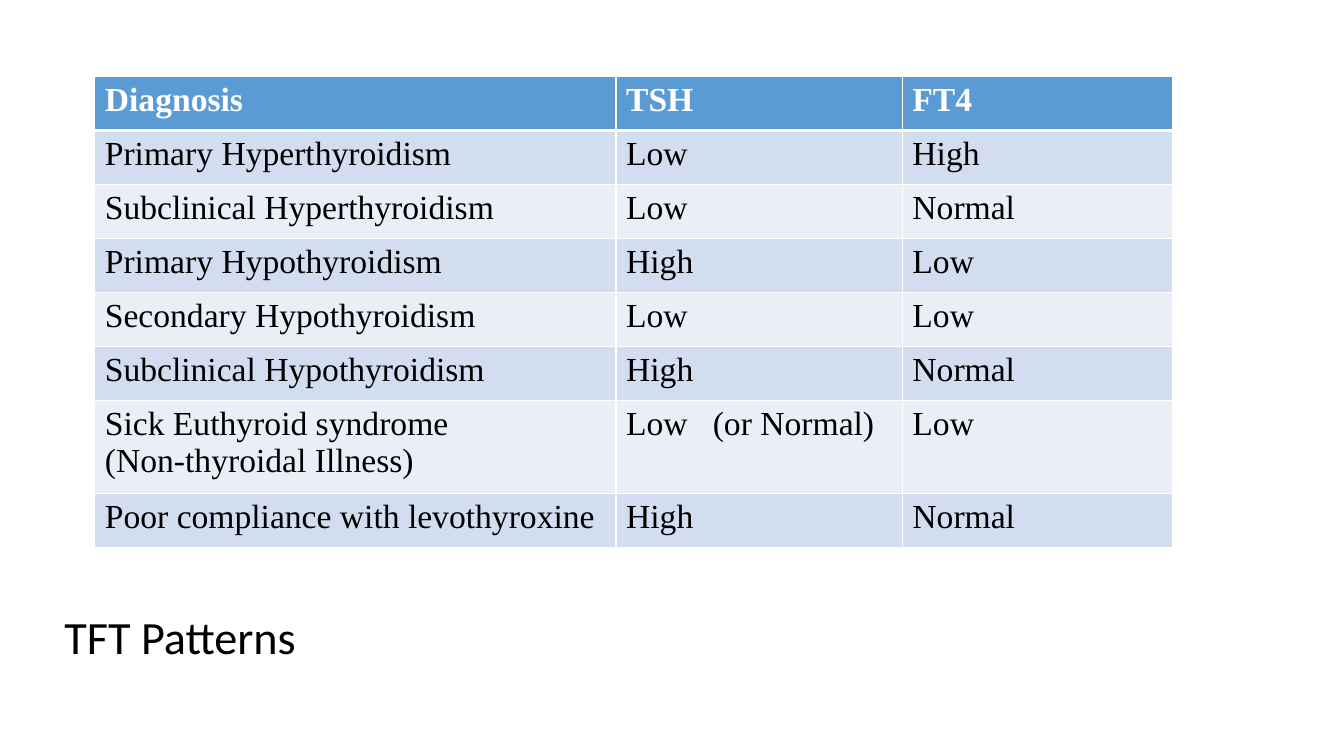
"""Build a slide with a table of thyroid function test patterns."""
from lxml import etree
from pptx import Presentation
from pptx.dml.color import RGBColor
from pptx.enum.text import MSO_ANCHOR
from pptx.oxml.ns import qn
from pptx.util import Inches, Pt

MIDDLE = MSO_ANCHOR.MIDDLE
WHITE, BLACK = "FFFFFF", "000000"
HEADER_FILL = "5B9BD5"
BAND_FILLS = ["D2DEEF", "EAEFF7"]
COLUMN_WIDTHS = [5.17, 2.84, 2.68]
TABLE_HEIGHT, TALL_ROW_HEIGHT = 4.67, 0.92
TAB_POSITION = 0.86

ROWS = [
    ["Diagnosis", "TSH", "FT4"],
    ["Primary Hyperthyroidism", "Low", "High"],
    ["Subclinical Hyperthyroidism", "Low", "Normal"],
    ["Primary Hypothyroidism", "High", "Low"],
    ["Secondary Hypothyroidism", "Low", "Low"],
    ["Subclinical Hypothyroidism", "High", "Normal"],
    ["Sick Euthyroid syndrome\n(Non-thyroidal Illness)", "Low\t(or Normal)", "Low"],
    ["Poor compliance with levothyroxine", "High", "Normal"],
]


def rgb(color):
    """Turn a hex string into a colour."""
    return RGBColor.from_string(color)


def add_run(paragraph, text, font_name, size, color, bold=False):
    """Add one formatted run to a paragraph."""
    run = paragraph.add_run()
    run.text = text
    run.font.name = font_name
    run.font.size = Pt(size)
    run.font.bold = bold
    run.font.color.rgb = rgb(color)


def add_tab_stop(paragraph, position):
    """Give a paragraph a left tab stop."""
    properties = paragraph._p.get_or_add_pPr()
    tab_list = etree.SubElement(properties, qn("a:tabLst"))
    etree.SubElement(tab_list, qn("a:tab"), pos=str(Inches(position)), algn="l")


def set_border(cell, side, width):
    """Draw a white border on one side of a cell."""
    properties = cell._tc.get_or_add_tcPr()
    line = etree.SubElement(properties, qn(f"a:ln{side}"), w=str(Pt(width)))
    fill = etree.SubElement(line, qn("a:solidFill"))
    etree.SubElement(fill, qn("a:srgbClr"), val=WHITE)


def fill_cell(cell, text, row_index):
    """Write and style a cell according to its row."""
    is_header = row_index == 0
    for side in "LRTB":
        on_header_edge = (row_index, side) in [(0, "B"), (1, "T")]
        set_border(cell, side, 3 if on_header_edge else 1)
    cell.fill.solid()
    fill_color = HEADER_FILL if is_header else BAND_FILLS[(row_index - 1) % 2]
    cell.fill.fore_color.rgb = rgb(fill_color)
    for index, line in enumerate(text.split("\n")):
        frame = cell.text_frame
        paragraph = frame.add_paragraph() if index else frame.paragraphs[0]
        if "\t" in line:
            add_tab_stop(paragraph, TAB_POSITION)
        add_run(paragraph, line, "Times New Roman", 24,
                WHITE if is_header else BLACK, is_header)


def add_pattern_table(slide, left, top):
    """Add the table of diagnoses and hormone levels."""
    table = slide.shapes.add_table(
        len(ROWS), len(COLUMN_WIDTHS), Inches(left), Inches(top),
        Inches(sum(COLUMN_WIDTHS)), Inches(TABLE_HEIGHT)).table
    for column, width in zip(table.columns, COLUMN_WIDTHS):
        column.width = Inches(width)
    row_height = (TABLE_HEIGHT - TALL_ROW_HEIGHT) / (len(ROWS) - 1)
    for row_index, texts in enumerate(ROWS):
        is_tall = "\n" in texts[0]
        table.rows[row_index].height = Inches(TALL_ROW_HEIGHT if is_tall else row_height)
        for column_index, text in enumerate(texts):
            fill_cell(table.cell(row_index, column_index), text, row_index)


def add_title(slide, text, left, top, width, height):
    """Add the slide title as a vertically centred text box."""
    box = slide.shapes.add_textbox(
        Inches(left), Inches(top), Inches(width), Inches(height))
    frame = box.text_frame
    frame.word_wrap = True
    frame.vertical_anchor = MIDDLE
    paragraph = frame.paragraphs[0]
    paragraph.line_spacing = 0.9
    add_run(paragraph, text, "Calibri", 33, BLACK)


def main():
    """Build and save the presentation."""
    presentation = Presentation()
    presentation.slide_width = Inches(13.33)
    presentation.slide_height = Inches(7.5)
    slide = presentation.slides.add_slide(presentation.slide_layouts[6])
    add_title(slide, "TFT Patterns", 0.54, 5.62, 11.5, 1.45)
    add_pattern_table(slide, 0.94, 0.76)
    presentation.save("out.pptx")


if __name__ == "__main__":
    main()
